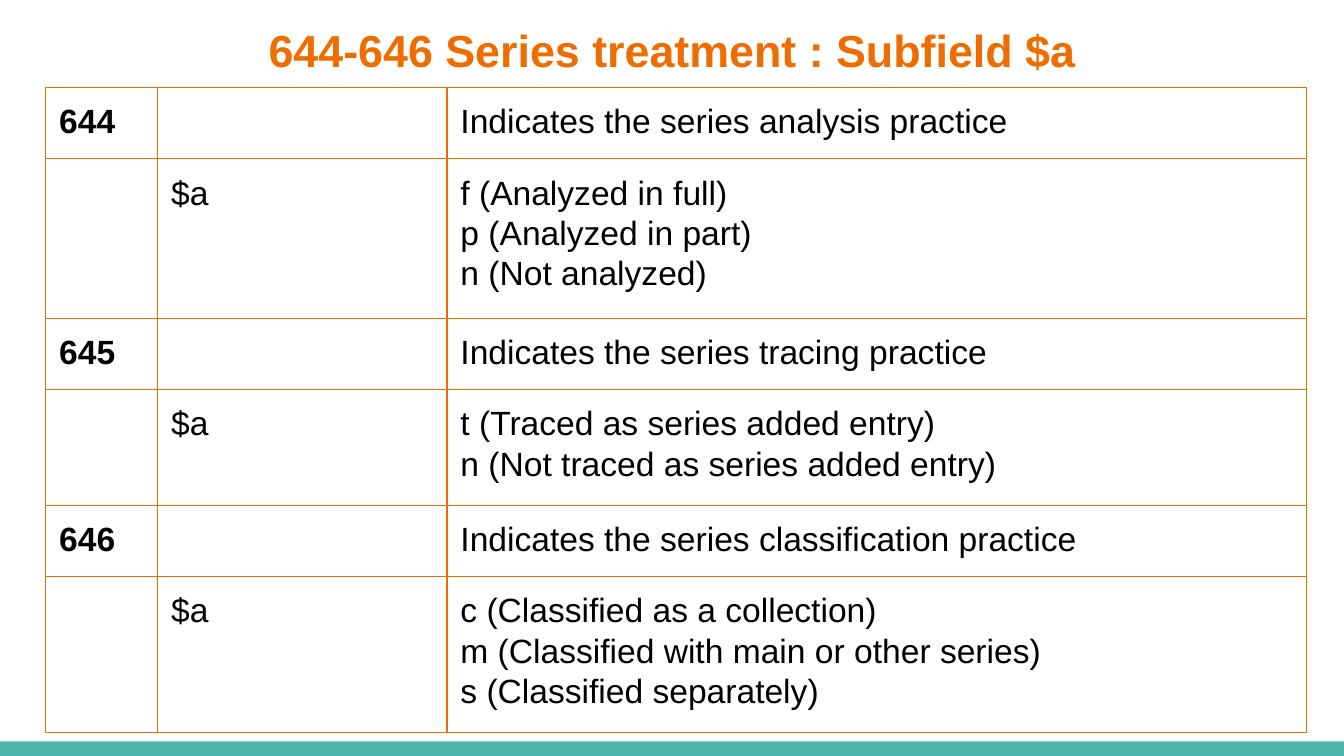
import pptx
import pptx.util
import pptx.dml.color
import pptx.enum.shapes
import pptx.enum.text
import lxml.etree

Pt = pptx.util.Pt
ORANGE = "EF6C00"


def color(code):
    return pptx.dml.color.RGBColor.from_string(code)


def write(frame, text, size, code, bold, space):
    frame.text = text
    frame.word_wrap = True
    frame.vertical_anchor = pptx.enum.text.MSO_ANCHOR.TOP
    for para in frame.paragraphs:
        para.line_spacing = space
        para.font.name = "Arial"
        para.font.size = Pt(size)
        para.font.bold = bold
        para.font.color.rgb = color(code)


deck = pptx.Presentation()
deck.slide_width = Pt(720)
deck.slide_height = Pt(405)
slide = deck.slides.add_slide(deck.slide_layouts[6])

band = slide.shapes.add_shape(
    pptx.enum.shapes.MSO_SHAPE.RECTANGLE, 0, Pt(397.2), Pt(720), Pt(7.8))
band.shadow.inherit = False
band.fill.solid()
band.fill.fore_color.rgb = color("4DB6AC")
band.line.fill.background()

title = slide.shapes.add_textbox(Pt(24.5), Pt(8), Pt(671), Pt(28))
frame = title.text_frame
write(frame, "644-646 Series treatment : Subfield $a", 24, ORANGE, True, 0.9)
frame.paragraphs[0].alignment = pptx.enum.text.PP_ALIGN.CENTER
frame.margin_left = frame.margin_right = Pt(7.2)
frame.margin_top = frame.margin_bottom = Pt(7.2)

rows = [
    (38.2, "644", "", "Indicates the series analysis practice"),
    (85.5, "", "$a", "f (Analyzed in full)\np (Analyzed in part)\nn (Not analyzed)"),
    (38.2, "645", "", "Indicates the series tracing practice"),
    (62, "", "$a", "t (Traced as series added entry)\nn (Not traced as series added entry)"),
    (38.2, "646", "", "Indicates the series classification practice"),
    (83, "", "$a", "c (Classified as a collection)\n"
     "m (Classified with main or other series)\ns (Classified separately)"),
]
widths = [60, 155, 460.5]

grid = slide.shapes.add_table(
    len(rows), len(widths), Pt(24.5), Pt(46.8),
    Pt(sum(widths)), Pt(sum(row[0] for row in rows))).table
grid.first_row = False
grid.horz_banding = False
for col, width in zip(grid.columns, widths):
    col.width = Pt(width)

for r, (height, *texts) in enumerate(rows):
    grid.rows[r].height = Pt(height)
    for c, text in enumerate(texts):
        cell = grid.cell(r, c)
        cell.margin_left = cell.margin_right = Pt(7.2)
        cell.margin_top = cell.margin_bottom = Pt(7.2)
        write(cell.text_frame, text, 18, "000000", c == 0, 1.07)
        cell.vertical_anchor = pptx.enum.text.MSO_ANCHOR.TOP
        props = cell._tc.get_or_add_tcPr()
        for side in ("lnL", "lnR", "lnT", "lnB"):
            line = lxml.etree.SubElement(
                props, pptx.oxml.ns.qn("a:" + side), w=str(Pt(0.75)))
            fill = lxml.etree.SubElement(line, pptx.oxml.ns.qn("a:solidFill"))
            lxml.etree.SubElement(fill, pptx.oxml.ns.qn("a:srgbClr"), val=ORANGE)
        cell.fill.background()

deck.save("out.pptx")
